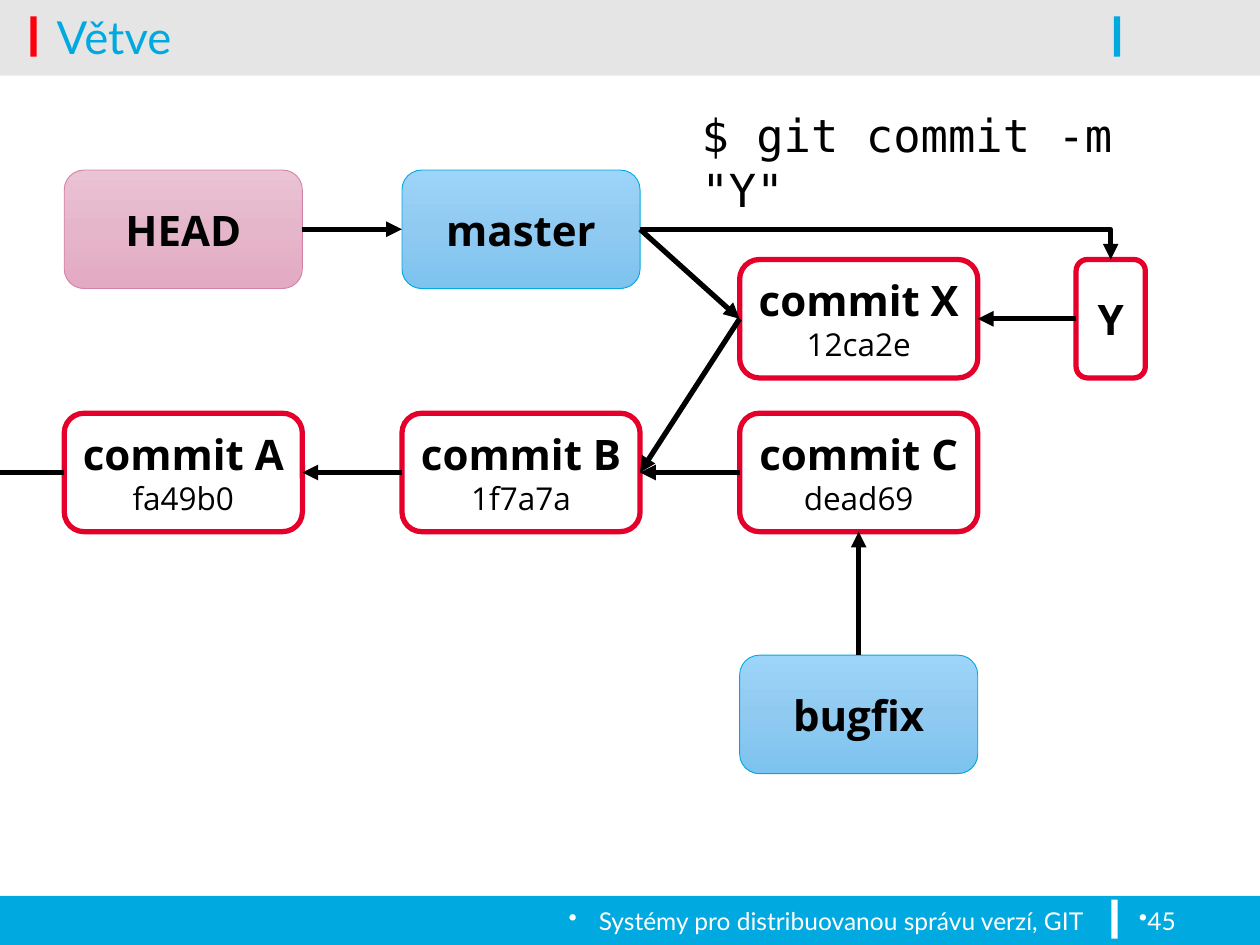
from copy import deepcopy
from dataclasses import dataclass

from lxml import etree
from pptx import Presentation
from pptx.dml.color import RGBColor
from pptx.enum.shapes import MSO_CONNECTOR, MSO_SHAPE
from pptx.enum.text import MSO_ANCHOR, PP_ALIGN
from pptx.oxml.ns import qn
from pptx.util import Inches, Pt

RECTANGLE = MSO_SHAPE.RECTANGLE
ROUNDED = MSO_SHAPE.ROUNDED_RECTANGLE
STRAIGHT = MSO_CONNECTOR.STRAIGHT
ELBOW = MSO_CONNECTOR.ELBOW
LEFT, CENTER, RIGHT = PP_ALIGN.LEFT, PP_ALIGN.CENTER, PP_ALIGN.RIGHT
TOP_ANCHOR, MIDDLE = MSO_ANCHOR.TOP, MSO_ANCHOR.MIDDLE
TOP_SIDE, LEFT_SIDE, BOTTOM_SIDE, RIGHT_SIDE = range(4)


@dataclass(frozen=True)
class Theme:
    cyan: str = "00A9E0"
    red: str = "FE000C"
    crimson: str = "E4002B"
    pink_line: str = "D582A9"
    white: str = "FFFFFF"
    black: str = "000000"
    blue_gradient: tuple = ("9DD4F9", "90CAF1", "7CC3EF")
    pink_gradient: tuple = ("EAC3D4", "E5B6CA", "E4AAC3")
    ui_font: str = "Lato"
    node_font: str = "Open Sans"
    code_font: str = "DejaVu Sans Mono"
    heading_size: int = 26
    node_size: int = 24
    hash_size: int = 18
    footer_size: int = 14
    thick: float = 3
    thin: float = 0.5


class SlideBuilder:
    def __init__(self, slide, theme):
        self.slide = slide
        self.theme = theme

    def format_run(self, run, font, size, color, bold=False):
        run.font.name = font
        run.font.size = Pt(size)
        run.font.bold = bold
        run.font.color.rgb = RGBColor.from_string(color)

    def shape(self, kind, left, top, width, height):
        shape = self.slide.shapes.add_shape(
            kind, Inches(left), Inches(top), Inches(width), Inches(height))
        shape.shadow.inherit = False
        return shape

    def bar(self, left, top, width, height, color, opacity=100):
        bar = self.shape(RECTANGLE, left, top, width, height)
        bar.fill.solid()
        bar.fill.fore_color.rgb = RGBColor.from_string(color)
        bar.line.fill.background()
        if opacity < 100:
            color_element = bar.element.spPr.find(qn("a:solidFill"))[0]
            etree.SubElement(color_element, qn("a:alpha"), val=str(opacity * 1000))

    def text(self, left, top, width, height, text, font, size, color,
             align=LEFT, anchor=TOP_ANCHOR, bullet_indent=None):
        box = self.slide.shapes.add_textbox(
            Inches(left), Inches(top), Inches(width), Inches(height))
        frame = box.text_frame
        frame.word_wrap = True
        frame.vertical_anchor = anchor
        frame.text = text
        paragraph = frame.paragraphs[0]
        paragraph.alignment = align
        if bullet_indent is not None:
            properties = paragraph._p.get_or_add_pPr()
            properties.set("marL", str(Inches(bullet_indent)))
            properties.set("indent", str(-Inches(bullet_indent)))
            etree.SubElement(properties, qn("a:buChar"), char="•")
        self.format_run(paragraph.runs[0], font, size, color)

    def node(self, left, top, width, height, text, line_color, line_width):
        theme = self.theme
        node = self.shape(ROUNDED, left, top, width, height)
        node.line.color.rgb = RGBColor.from_string(line_color)
        node.line.width = Pt(line_width)
        frame = node.text_frame
        frame.word_wrap = True
        frame.vertical_anchor = MIDDLE
        paragraph = frame.paragraphs[0]
        paragraph.text = text
        paragraph.alignment = CENTER
        name, *hashes = paragraph.runs
        self.format_run(name, theme.node_font, theme.node_size, theme.black, True)
        for run in hashes:
            self.format_run(run, theme.node_font, theme.hash_size, theme.black)
        return node

    def commit(self, left, top, width, height, text):
        commit = self.node(left, top, width, height, text,
                           self.theme.crimson, self.theme.thick)
        commit.fill.solid()
        commit.fill.fore_color.rgb = RGBColor.from_string(self.theme.white)
        return commit

    def reference(self, left, top, width, height, text, gradient, line_color):
        reference = self.node(left, top, width, height, text,
                              line_color, self.theme.thin)
        fill = reference.fill
        fill.gradient()
        fill.gradient_angle = 270
        stop_list = reference.element.spPr.find(qn("a:gradFill")).find(qn("a:gsLst"))
        stop_list.insert(1, deepcopy(stop_list[0]))
        for stop, position, color in zip(fill.gradient_stops, (0, 0.5, 1), gradient):
            stop.position = position
            stop.color.rgb = RGBColor.from_string(color)
        return reference

    def connector(self, kind, source, source_side, end_x=0, end_y=0):
        connector = self.slide.shapes.add_connector(
            kind, 0, 0, Inches(end_x), Inches(end_y))
        connector.begin_connect(source, source_side)
        connector.line.color.rgb = RGBColor.from_string(self.theme.black)
        connector.line.width = Pt(self.theme.thick)
        etree.SubElement(connector._element.spPr, qn("a:effectLst"))
        return connector

    def arrow(self, source, source_side, target, target_side, kind=STRAIGHT):
        arrow = self.connector(kind, source, source_side)
        arrow.end_connect(target, target_side)
        properties = arrow._element.spPr
        etree.SubElement(properties.find(qn("a:ln")), qn("a:tailEnd"), type="triangle")
        if kind == ELBOW:
            properties.find(qn("a:prstGeom")).set("prst", "bentConnector2")


def main():
    presentation = Presentation()
    presentation.slide_width = Inches(10)
    presentation.slide_height = Inches(7.5)
    slide = presentation.slides.add_slide(presentation.slide_layouts[6])
    theme = Theme()
    builder = SlideBuilder(slide, theme)

    builder.bar(0, 7.11, 10, 0.39, theme.cyan)
    builder.bar(0, 0.56, 10, 0.04, theme.black, opacity=10)
    builder.bar(0, 0, 10, 0.56, theme.black, opacity=10)
    builder.bar(0.24, 0.13, 0.05, 0.32, theme.red)
    builder.bar(8.82, 7.14, 0.05, 0.31, theme.white)
    builder.bar(8.84, 0.13, 0.05, 0.32, theme.cyan)

    builder.text(0.35, -0.11, 8.42, 0.79, "Větve", theme.ui_font,
                 theme.heading_size, theme.cyan, anchor=MIDDLE)
    builder.text(5.47, 0.8, 4, 0.54, '$ git commit -m "Y"', theme.code_font,
                 theme.heading_size, theme.black)
    builder.text(0.12, 7.14, 8.58, 0.36, "Systémy pro distribuovanou správu verzí, GIT",
                 theme.ui_font, theme.footer_size, theme.white, RIGHT, bullet_indent=0.24)
    builder.text(8.94, 7.14, 0.9, 0.36, "45", theme.ui_font,
                 theme.footer_size, theme.white, bullet_indent=0)

    columns = [0.51 + 2.68 * index for index in range(3)]
    reference_row, new_row, commit_row, bugfix_row = 1.35, 2.06, 3.28, 5.2
    size = (1.89, 0.94)

    commit_a, commit_b, commit_c = [
        builder.commit(left, commit_row, *size, text)
        for left, text in zip(columns, (
            "commit A\vfa49b0", "commit B\v1f7a7a", "commit C\vdead69"))]
    commit_x = builder.commit(columns[2], new_row, *size, "commit X\v12ca2e")
    commit_y = builder.commit(8.54, new_row, 0.55, size[1], "Y")
    head = builder.reference(columns[0], reference_row, *size, "HEAD",
                             theme.pink_gradient, theme.pink_line)
    master, bugfix = [
        builder.reference(left, top, *size, text, theme.blue_gradient, theme.cyan)
        for left, top, text in ((columns[1], reference_row, "master"),
                                (columns[2], bugfix_row, "bugfix"))]

    for source, target in ((commit_b, commit_a), (commit_c, commit_b),
                           (commit_x, commit_b), (commit_y, commit_x)):
        builder.arrow(source, LEFT_SIDE, target, RIGHT_SIDE)
    for source, target in ((head, master), (master, commit_x)):
        builder.arrow(source, RIGHT_SIDE, target, LEFT_SIDE)
    builder.arrow(bugfix, TOP_SIDE, commit_c, BOTTOM_SIDE)
    builder.arrow(master, RIGHT_SIDE, commit_y, TOP_SIDE, ELBOW)
    builder.connector(STRAIGHT, commit_a, LEFT_SIDE, 0, commit_row + size[1] / 2)

    presentation.save("out.pptx")


if __name__ == "__main__":
    main()
